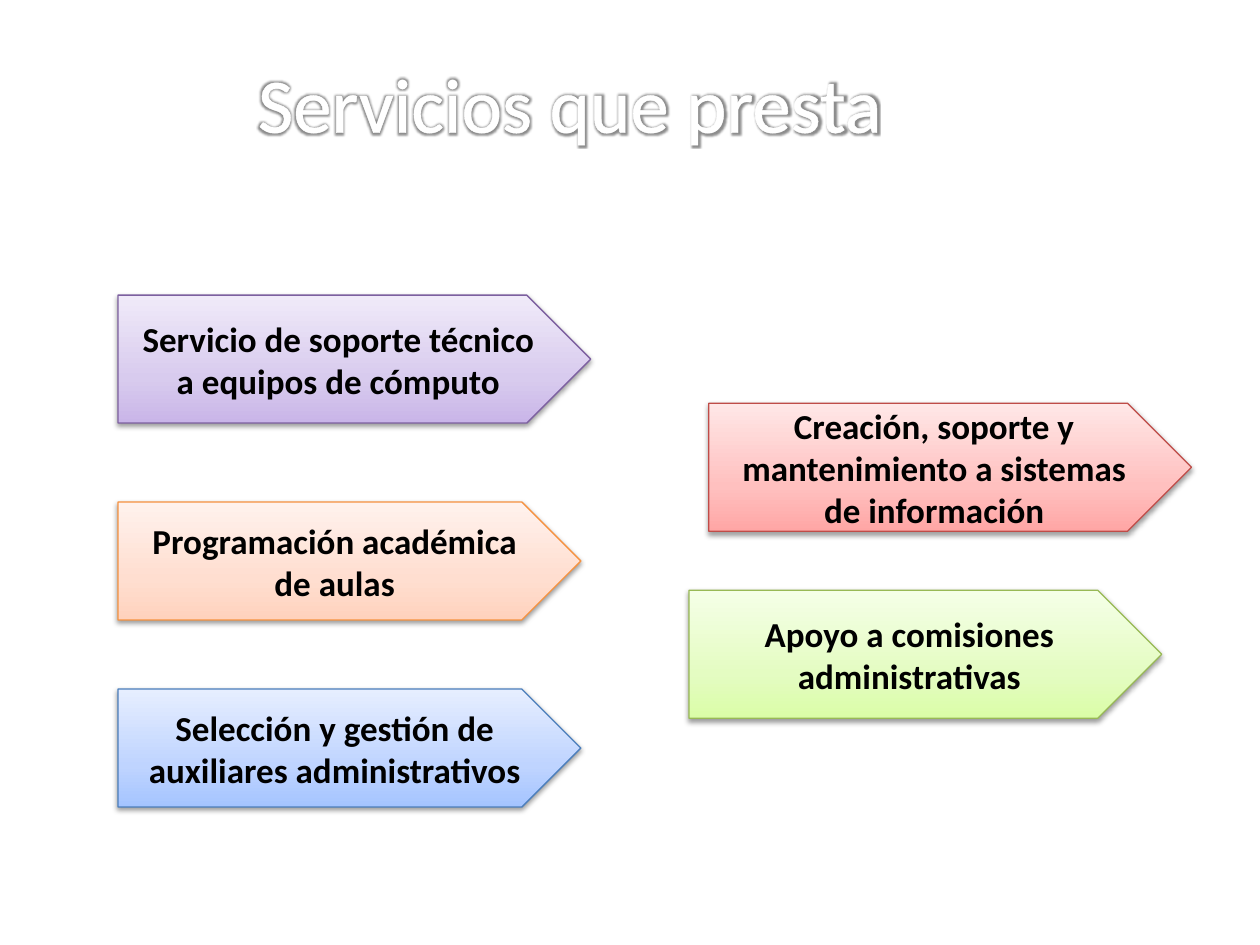
from dataclasses import dataclass

from pptx import Presentation
from pptx.dml.color import RGBColor as Color
from pptx.enum.shapes import MSO_SHAPE as Shape
from pptx.enum.text import MSO_ANCHOR as Anchor, MSO_AUTO_SIZE as AutoSize, PP_ALIGN as Align
from pptx.oxml import parse_xml
from pptx.oxml.ns import nsdecls, qn
from pptx.util import Cm, Pt


@dataclass(frozen=True)
class Theme:
    font: str = "Calibri"
    title_size: float = 44
    label_size: float = 20
    title_color: str = "FFFFFF"
    title_outline: float = 1.45
    title_glow: float = 4
    label_color: str = "000000"
    shadow_color: str = "000000"
    line_width: float = 0.75
    stops: tuple = (0, 35, 100)
    purple: tuple = ("7D60A0", "C9B5E8", "D8CBEE", "F0EAF9")
    orange: tuple = ("F69240", "FFD2BD", "FFDED0", "FFF2ED")
    blue: tuple = ("4B7EBC", "A4C4FF", "BFD4FF", "E6EEFF")
    red: tuple = ("BF4C48", "FFA6A5", "FFC0BF", "FFE7E7")
    green: tuple = ("98B955", "DAFDA7", "E4FCC2", "F5FFE7")


def color_xml(color, opacity=100):
    return (
        f'<a:srgbClr {nsdecls("a")} val="{color}">'
        f'<a:alpha val="{opacity * 1000}"/></a:srgbClr>'
    )


class ServicesSlide:
    def __init__(self, deck, theme):
        self.theme = theme
        self.page = deck.slides.add_slide(deck.slide_layouts[6])

    def style_text(self, span, size, color, bold=False):
        span.font.name = self.theme.font
        span.font.size = Pt(size)
        span.font.bold = bold
        span.font.color.rgb = Color.from_string(color)

    def title(self, text, left, top, width, height):
        theme = self.theme
        box = self.page.shapes.add_textbox(Cm(left), Cm(top), Cm(width), Cm(height))
        frame = box.text_frame
        frame.word_wrap = True
        frame.auto_size = AutoSize.SHAPE_TO_FIT_TEXT
        frame.text = text
        span = frame.paragraphs[0].runs[0]
        self.style_text(span, theme.title_size, theme.title_color)
        properties = span.font._element
        properties.insert(0, parse_xml(
            f'<a:ln {nsdecls("a")} w="{Pt(theme.title_outline)}"><a:solidFill>'
            f'{color_xml(theme.title_color)}</a:solidFill></a:ln>'
        ))
        properties.find(qn("a:solidFill")).addnext(parse_xml(
            f'<a:effectLst {nsdecls("a")}><a:glow rad="{Pt(theme.title_glow)}">'
            f'{color_xml(theme.shadow_color, 45)}</a:glow></a:effectLst>'
        ))

    def arrow(self, text, palette, left, top, width, height):
        theme = self.theme
        line_color, *gradient = palette
        arrow = self.page.shapes.add_shape(
            Shape.PENTAGON, Cm(left), Cm(top), Cm(width), Cm(height)
        )
        arrow.line.color.rgb = Color.from_string(line_color)
        arrow.line.width = Pt(theme.line_width)
        self.fill_gradient(arrow, gradient)
        self.drop_shadow(arrow)

        frame = arrow.text_frame
        frame.word_wrap = True
        frame.vertical_anchor = Anchor.MIDDLE
        frame.text = text
        para = frame.paragraphs[0]
        para.alignment = Align.CENTER
        self.style_text(para.runs[0], theme.label_size, theme.label_color, bold=True)

    def drop_shadow(self, shape):
        shape.shadow.inherit = False
        effects = shape._element.spPr.find(qn("a:effectLst"))
        effects.append(parse_xml(
            f'<a:outerShdw {nsdecls("a")} blurRad="{Pt(3.1)}" dist="{Pt(1.6)}" '
            f'dir="5400000" rotWithShape="0">'
            f'{color_xml(self.theme.shadow_color, 38)}</a:outerShdw>'
        ))

    def fill_gradient(self, shape, colors):
        shape.fill.gradient()
        shape.fill.gradient_angle = 90
        stop_list = shape._element.spPr.find(qn("a:gradFill")).find(qn("a:gsLst"))
        for stop in list(stop_list):
            stop_list.remove(stop)
        for position, color in zip(self.theme.stops, colors):
            stop_list.append(parse_xml(
                f'<a:gs {nsdecls("a")} pos="{position * 1000}">{color_xml(color)}</a:gs>'
            ))


def main():
    deck = Presentation()
    deck.slide_width, deck.slide_height = Cm(25.4), Cm(19.05)
    theme = Theme()
    slide = ServicesSlide(deck, theme)

    slide.title("Servicios que presta", 4.95, 1, 19.9, 2.14)

    services = (
        ("Apoyo a comisiones administrativas", theme.green, 13.89, 11.9, 9.53, 2.58),
        ("Selección y gestión de auxiliares administrativos", theme.blue, 2.38, 13.89, 9.33, 2.38),
        ("Creación, soporte y mantenimiento a sistemas de información", theme.red, 14.29, 8.13, 9.73, 2.58),
        ("Servicio de soporte técnico a equipos de cómputo", theme.purple, 2.38, 5.95, 9.53, 2.58),
        ("Programación académica de aulas", theme.orange, 2.38, 10.12, 9.33, 2.38),
    )
    for service in services:
        slide.arrow(*service)

    deck.save("out.pptx")


if __name__ == "__main__":
    main()
